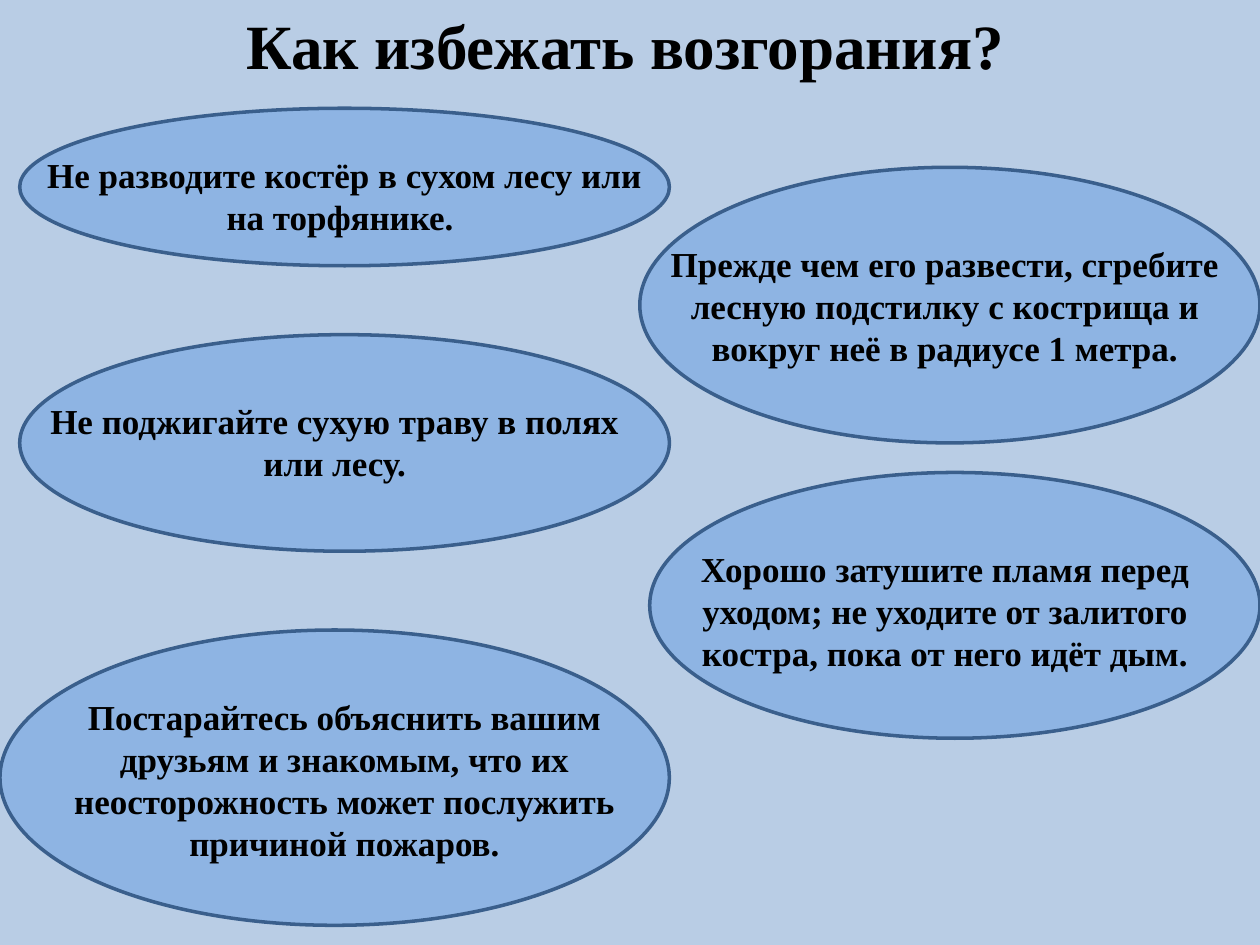
import pptx
import pptx.util
import pptx.dml.color
import pptx.enum.shapes
import pptx.enum.text

COLORS = {"background": "B9CDE5", "oval": "8EB4E3", "outline": "3A5F8C", "text": "000000"}
FONT = "Times New Roman"
COLS, ROWS = 64, 48
NOTE_COLS = 32

TITLE = "Как избежать возгорания?"
TITLE_BOX = (1, 0, 61.5, 4.5)
# box, note offset, note rows, text
TIPS = [
    ((33, 24, 31, 13.5), (-1, 3.5), 7.1,
     "Хорошо затушите пламя перед уходом; не уходите от залитого костра, пока от него идёт дым."),
    ((32.5, 8.5, 31.5, 14), (-0.5, 3.5), 7.1,
     "Прежде чем его развести, сгребите лесную подстилку с кострища и вокруг неё в радиусе 1 метра."),
    ((0, 32, 34, 15), (1.5, 3), 9.3,
     "Постарайтесь объяснить вашим друзьям и знакомым, что их неосторожность может послужить причиной пожаров."),
    ((1, 17, 33, 11), (0, 3), 4.9,
     "Не поджигайте сухую траву в полях или лесу."),
    ((1, 5.5, 33, 8), (0.5, 2), 4.9,
     "Не разводите костёр в сухом лесу или на торфянике. "),
]


def rgb(name):
    return pptx.dml.color.RGBColor.from_string(COLORS[name])


def grid(prs, box):
    x, y, w, h = box
    col, row = prs.slide_width / COLS, prs.slide_height / ROWS
    return int(x * col), int(y * row), int(w * col), int(h * row)


def write(sp, text, size=20, bold=True, color="text"):
    tf = sp.text_frame
    tf.word_wrap = True
    tf.auto_size = pptx.enum.text.MSO_AUTO_SIZE.SHAPE_TO_FIT_TEXT
    tf.vertical_anchor = pptx.enum.text.MSO_ANCHOR.TOP
    p = tf.paragraphs[0]
    p.alignment = pptx.enum.text.PP_ALIGN.CENTER
    r = p.add_run()
    r.text = text
    r.font.name = FONT
    r.font.size = pptx.util.Pt(size)
    r.font.bold = bold
    r.font.color.rgb = rgb(color)


def add_title(prs, s, box):
    sp = s.shapes.title
    sp.left, sp.top, sp.width, sp.height = grid(prs, box)
    write(sp, TITLE, size=36)


def add_tip(prs, s, box, offset, note_rows, text):
    sp = s.shapes.add_shape(pptx.enum.shapes.MSO_SHAPE.OVAL, *grid(prs, box))
    sp.shadow.inherit = False
    sp.fill.solid()
    sp.fill.fore_color.rgb = rgb("oval")
    sp.line.color.rgb = rgb("outline")
    sp.line.width = pptx.util.Pt(2)
    note = (box[0] + offset[0], box[1] + offset[1], NOTE_COLS, note_rows)
    write(s.shapes.add_textbox(*grid(prs, note)), text)


def main():
    prs = pptx.Presentation()
    prs.slide_width = pptx.util.Inches(10)
    prs.slide_height = pptx.util.Inches(7.5)
    s = prs.slides.add_slide(prs.slide_layouts[5])
    s.background.fill.solid()
    s.background.fill.fore_color.rgb = rgb("background")
    add_title(prs, s, TITLE_BOX)
    for tip in TIPS:
        add_tip(prs, s, *tip)
    prs.save("out.pptx")


if __name__ == "__main__":
    main()
